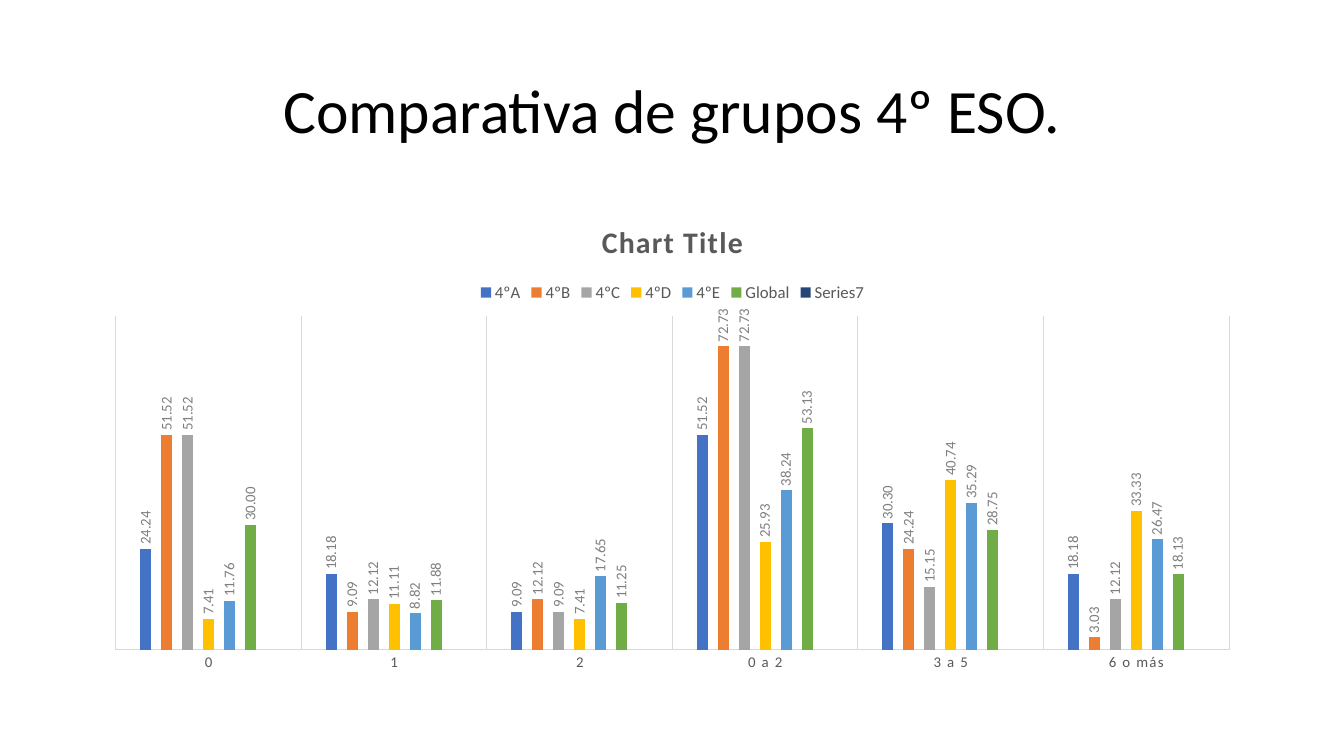
from pptx import Presentation
from pptx.chart.data import CategoryChartData
from pptx.dml.color import RGBColor
from pptx.enum.chart import (XL_CHART_TYPE, XL_LABEL_POSITION as LabelPos,
                             XL_LEGEND_POSITION as LegendPos,
                             XL_TICK_LABEL_POSITION as TickLabelPos,
                             XL_TICK_MARK as TickMark)
from pptx.enum.text import MSO_ANCHOR, PP_ALIGN
from pptx.oxml.ns import qn
from pptx.util import Inches, Pt

FONT = "Calibri"
ANSWERS = ["0", "1", "2", "0 a 2", "3 a 5", "6 o más"]
GROUPS = [
    ("4ºA", "4472C4", [24.24, 18.18, 9.09, 51.52, 30.3, 18.18]),
    ("4ºB", "ED7D31", [51.52, 9.09, 12.12, 72.73, 24.24, 3.03]),
    ("4ºC", "A5A5A5", [51.52, 12.12, 9.09, 72.73, 15.15, 12.12]),
    ("4ºD", "FFC000", [7.41, 11.11, 7.41, 25.93, 40.74, 33.33]),
    ("4ºE", "5B9BD5", [11.76, 8.82, 17.65, 38.24, 35.29, 26.47]),
    ("Global", "70AD47", [30, 11.88, 11.25, 53.13, 28.75, 18.13]),
    ("Series7", "264478", [None] * len(ANSWERS)),
]


def rgb(value):
    return RGBColor.from_string(value)


def set_font(font, size, color, bold=False):
    font.name = FONT
    font.size = Pt(size)
    font.bold = bold
    font.color.rgb = rgb(color)


def space_letters(font):
    """Widen the letter spacing by one point."""
    font._element.set("spc", "100")


def set_line(line):
    line.color.rgb = rgb("D9D9D9")
    line.width = Pt(0.75)


def add_heading(slide, left, top, width, height):
    frame = slide.shapes.add_textbox(left, top, width, height).text_frame
    frame.word_wrap = True
    frame.vertical_anchor = MSO_ANCHOR.MIDDLE
    heading = frame.paragraphs[0]
    heading.text = "Comparativa de grupos 4º ESO."
    heading.alignment = PP_ALIGN.CENTER
    heading.line_spacing = 0.9
    set_font(heading.font, 44, "000000")


def style_axes(chart):
    answers = chart.category_axis
    answers.major_tick_mark = answers.minor_tick_mark = TickMark.NONE
    answers.tick_label_position = TickLabelPos.NEXT_TO_AXIS
    set_font(answers.tick_labels.font, 10.6, "595959")
    space_letters(answers.tick_labels.font)
    set_line(answers.format.line)
    answers.has_major_gridlines = True
    set_line(answers.major_gridlines.format.line)

    percentages = chart.value_axis
    percentages.minimum_scale = 0
    percentages.maximum_scale = 80
    percentages.has_major_gridlines = False
    percentages.visible = False


def style_bars(bars):
    bars.gap_width = 444
    bars.overlap = -90
    bars.vary_by_categories = False
    for group, (_, color, _) in zip(bars.series, GROUPS):
        group.format.fill.solid()
        group.format.fill.fore_color.rgb = rgb(color)
        group.invert_if_negative = False
        labels = group.data_labels
        labels.show_value = True
        labels.position = LabelPos.OUTSIDE_END
        labels.number_format = "0.00"
        labels.number_format_is_linked = False
        set_font(labels.font, 10.6, "808080")
        body = next(labels._element.iter(qn("a:bodyPr")))
        body.set("rot", "-5400000")
        body.set("vert", "horz")


def add_comparison(slide, left, top, width, height):
    data = CategoryChartData(number_format="0.00")
    data.categories = ANSWERS
    for name, _, values in GROUPS:
        data.add_series(name, values)
    chart = slide.shapes.add_chart(XL_CHART_TYPE.COLUMN_CLUSTERED,
                                   left, top, width, height, data).chart
    set_font(chart.font, 10, "000000")

    chart.has_title = True
    title = chart.chart_title.text_frame.paragraphs[0]
    title.text = "Chart Title"
    set_font(title.font, 21.3, "595959", bold=True)
    space_letters(title.font)
    chart.chart_title.include_in_layout = False

    chart.has_legend = True
    chart.legend.position = LegendPos.TOP
    chart.legend.include_in_layout = False
    set_font(chart.legend.font, 12, "595959")

    style_axes(chart)
    style_bars(chart.plots[0])


def main():
    deck = Presentation()
    deck.slide_width, deck.slide_height = Inches(13.33), Inches(7.5)
    slide = deck.slides.add_slide(deck.slide_layouts[6])
    left, width = Inches(0.92), Inches(11.5)
    add_heading(slide, left, Inches(0.4), width, Inches(1.45))
    add_comparison(slide, left, Inches(2), width, Inches(4.76))
    deck.save("out.pptx")


if __name__ == "__main__":
    main()
